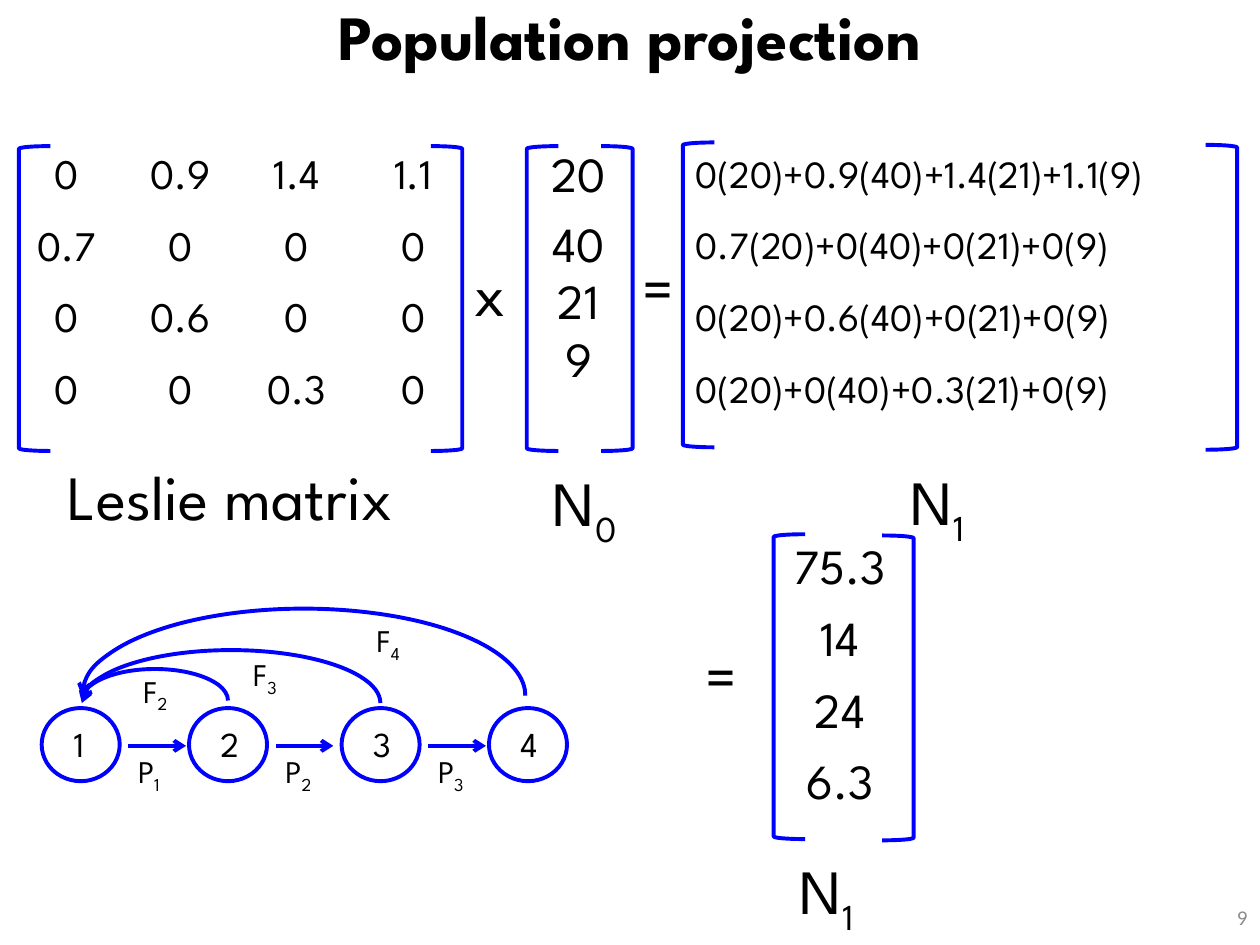
from dataclasses import dataclass

from lxml import etree
from pptx import Presentation
from pptx.dml.color import RGBColor
from pptx.enum.shapes import MSO_CONNECTOR, MSO_SHAPE
from pptx.enum.text import MSO_ANCHOR, MSO_AUTO_SIZE, PP_ALIGN
from pptx.oxml.ns import qn
from pptx.util import Pt

LEFT, CENTER, RIGHT = PP_ALIGN.LEFT, PP_ALIGN.CENTER, PP_ALIGN.RIGHT
MIDDLE = MSO_ANCHOR.MIDDLE
GROW = MSO_AUTO_SIZE.SHAPE_TO_FIT_TEXT
OVAL, ARC, BRACKET = MSO_SHAPE.OVAL, MSO_SHAPE.ARC, MSO_SHAPE.LEFT_BRACKET
STRAIGHT = MSO_CONNECTOR.STRAIGHT


@dataclass(frozen=True)
class Theme:
    font: str = "League Spartan"
    foot: str = "Calibri"
    ink: RGBColor = RGBColor(0, 0, 0)
    blue: RGBColor = RGBColor(0, 0, 255)
    gray: RGBColor = RGBColor(0x8C, 0x8C, 0x8C)
    line: float = 2.25
    big: int = 36
    vector: int = 28
    cell: int = 24
    sum: int = 22
    node: int = 20
    small: int = 18
    page: int = 12


THEME = Theme()


def pts(*nums):
    return [Pt(n) for n in nums]


def style(para, size, align=LEFT, name=THEME.font, color=THEME.ink):
    para.alignment = align
    font = para.font
    font.size, font.name = Pt(size), name
    font.color.rgb = color


def label(shapes, box, text, size, sub="", align=LEFT, wrap=False):
    """Add a text box, with an optional subscript."""
    frame = shapes.add_textbox(*pts(*box)).text_frame
    frame.word_wrap = wrap
    frame.auto_size = GROW
    para = frame.paragraphs[0]
    para.add_run().text = text
    if sub:
        run = para.add_run()
        run.text = sub
        run._r.get_or_add_rPr().set("baseline", "-25000")
    style(para, size, align)


def stroke(shape, end=""):
    """Draw the blue line, with an arrow at headEnd or tailEnd."""
    shape.line.color.rgb = THEME.blue
    shape.line.width = Pt(THEME.line)
    if end:
        ln = shape._element.spPr.find(qn("a:ln"))
        etree.SubElement(ln, qn(f"a:{end}"), type="arrow")


def outline(shapes, kind, box, end=""):
    shape = shapes.add_shape(kind, *pts(*box))
    shape.shadow.inherit = False
    shape.fill.background()
    stroke(shape, end)
    return shape


def arrow(shapes, x, y, length):
    link = shapes.add_connector(STRAIGHT, *pts(x, y, x + length, y))
    stroke(link, "tailEnd")
    etree.SubElement(link._element.spPr, qn("a:effectLst"))


def matrix(slide, box, rows, cols, heights, size, shift, drop=0, align=CENTER):
    """Bracket a table in the box; drop lowers the right bracket."""
    x, y, w, h = box
    dx, dy = shift
    frame = slide.shapes.add_table(
        len(rows), len(cols), *pts(x + dx, y + dy, sum(cols), sum(heights)))
    table = frame.table
    table.first_row = table.horz_banding = False
    for col, width in zip(table.columns, cols):
        col.width = Pt(width)
    for row, height, texts in zip(table.rows, heights, rows):
        row.height = Pt(height)
        for cell, text in zip(row.cells, texts):
            cell.fill.background()
            cell.text = text
            style(cell.text_frame.paragraphs[0], size, align)
    wide = 18
    outline(slide.shapes, BRACKET, (x, y, wide, h))
    right = outline(slide.shapes, BRACKET, (x + w - wide, y + drop, wide, h))
    right._element.spPr.find(qn("a:xfrm")).set("flipH", "1")


def cycle(slide, box):
    """Draw the life cycle graph: stages, survival and fertility."""
    x, y, w, h = box
    shapes = slide.shapes.add_group_shape().shapes
    wide, high = 44.6, 41.8
    top = y + h - high
    stages = [x, x + 84.2, x + 171.4, x + w - wide]
    for num, left in enumerate(stages, 1):
        outline(shapes, OVAL, (left, top, wide, high))
        label(shapes, (left + 10.8, top + 5, 21, 31.7), str(num),
              THEME.node, align=CENTER, wrap=True)
    for num, left in enumerate(stages[:-1], 1):
        arrow(shapes, left + 49.5, top + 21.6, 33)
        label(shapes, (left + 48, top + 21.6, 34, 29), "P",
              THEME.small, str(num))
    arcs = [(34.5, 83.5, 36), (23.7, 170.6, 60.5), (0, 253.4, 99.4)]
    spots = [(51, 32.4), (113.7, 23), (184.3, 3.6)]
    for num, (down, width, height) in enumerate(arcs, 2):
        arc = outline(shapes, ARC, (x + 23, y + down, width, height), "headEnd")
        arc.adjustments[0], arc.adjustments[1] = 108, 0
    for num, (dx, dy) in enumerate(spots, 2):
        label(shapes, (x + dx, y + dy, 32.4, 29), "F", THEME.small, str(num))


def heading(slide, box, text):
    title = slide.shapes.title
    title.left, title.top, title.width, title.height = pts(*box)
    frame = title.text_frame
    frame.text = text
    frame.vertical_anchor = MIDDLE
    para = frame.paragraphs[0]
    style(para, THEME.big, CENTER)
    para.font.bold = True
    para.line_spacing = 0.9


def footer(slide, box, text):
    frame = slide.shapes.add_textbox(*pts(*box)).text_frame
    frame.word_wrap = True
    frame.vertical_anchor = MIDDLE
    frame.text = text
    style(frame.paragraphs[0], THEME.page, RIGHT, THEME.foot, THEME.gray)


def column(items):
    return [[item] for item in items]


def main():
    deck = Presentation()
    deck.slide_width, deck.slide_height = pts(720, 540)
    slide = deck.slides.add_slide(deck.slide_layouts[5])
    heading(slide, (0, 0.7, 720, 44.6), "Population projection")

    tall = 174.2
    even = [41] * 4
    leslie = [["0", "0.9", "1.4", "1.1"], ["0.7", "0", "0", "0"],
              ["0", "0.6", "0", "0"], ["0", "0", "0.3", "0"]]
    sums = ["0(20)+0.9(40)+1.4(21)+1.1(9)", "0.7(20)+0(40)+0(21)+0(9)",
            "0(20)+0.6(40)+0(21)+0(9)", "0(20)+0(40)+0.3(21)+0(9)"]
    matrix(slide, (10.8, 83.5, 253.4, tall), leslie,
           [64.8, 64.8, 68.4, 64.8], even, THEME.cell, (-5, 4.3))
    matrix(slide, (301, 83.5, 60.5, tall), column(["20", "40", "21", "9"]),
           [67.7], [39.6] + [29.5] * 3, THEME.vector, (-4.3, 3.6))
    matrix(slide, (390.2, 81.4, 316.8, tall), column(sums),
           [324.7], even, THEME.sum, (0, 7.2), 1.4, LEFT)
    matrix(slide, (442.1, 305.3, 80, tall), column(["75.3", "14", "24", "6.3"]),
           [84.2], even, THEME.vector, (-4.3, 5.7), 0.7)

    marks = [(264.2, 141.1, 33, "x", ""), (360, 138.2, 36.7, "=", ""),
             (308.9, 261.4, 57, "N", "0"), (31.7, 257.8, 238.3, "Leslie matrix", ""),
             (513.4, 260.6, 57, "N", "1"), (396, 360, 36.7, "=", ""),
             (450, 483.1, 57, "N", "1")]
    for x, y, width, text, sub in marks:
        label(slide.shapes, (x, y, width, 51), text, THEME.big, sub)

    cycle(slide, (23.8, 347.8, 300.2, 98.6))
    footer(slide, (558, 509.8, 162, 28.8), "9")
    deck.save("out.pptx")


if __name__ == "__main__":
    main()
